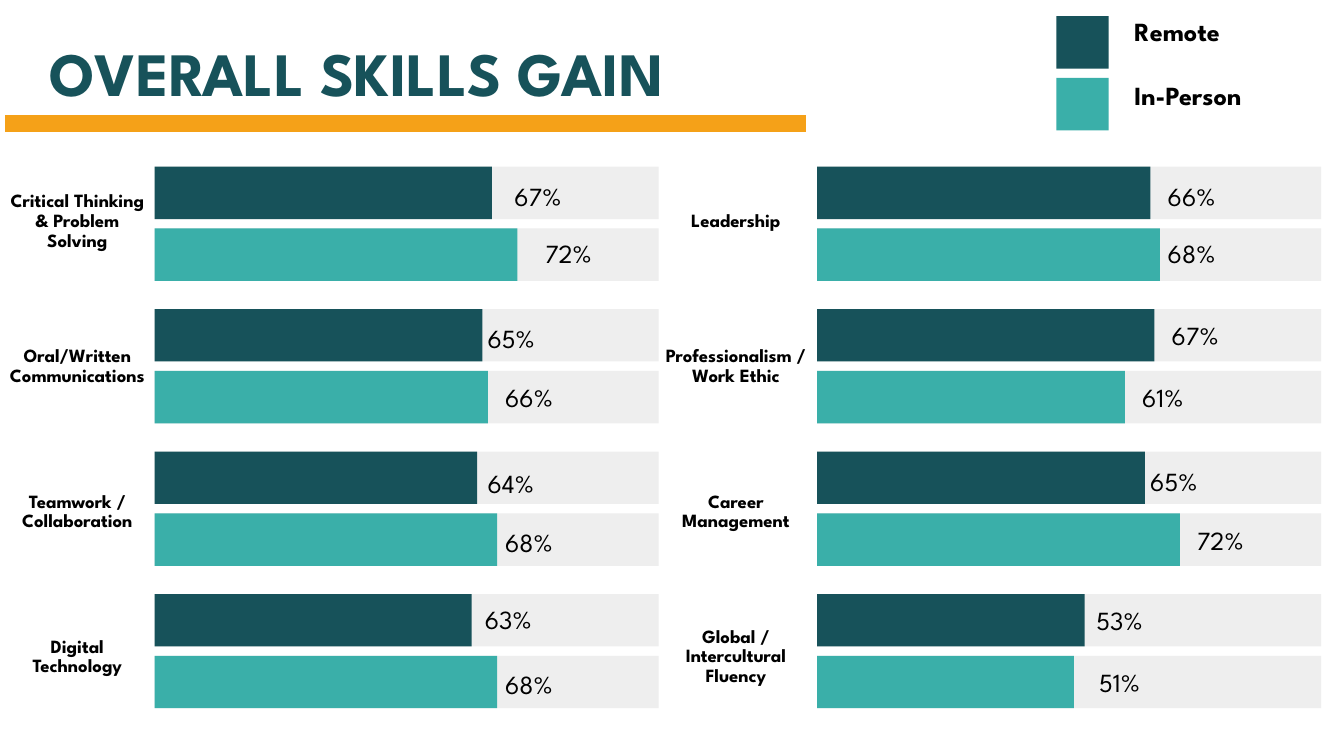
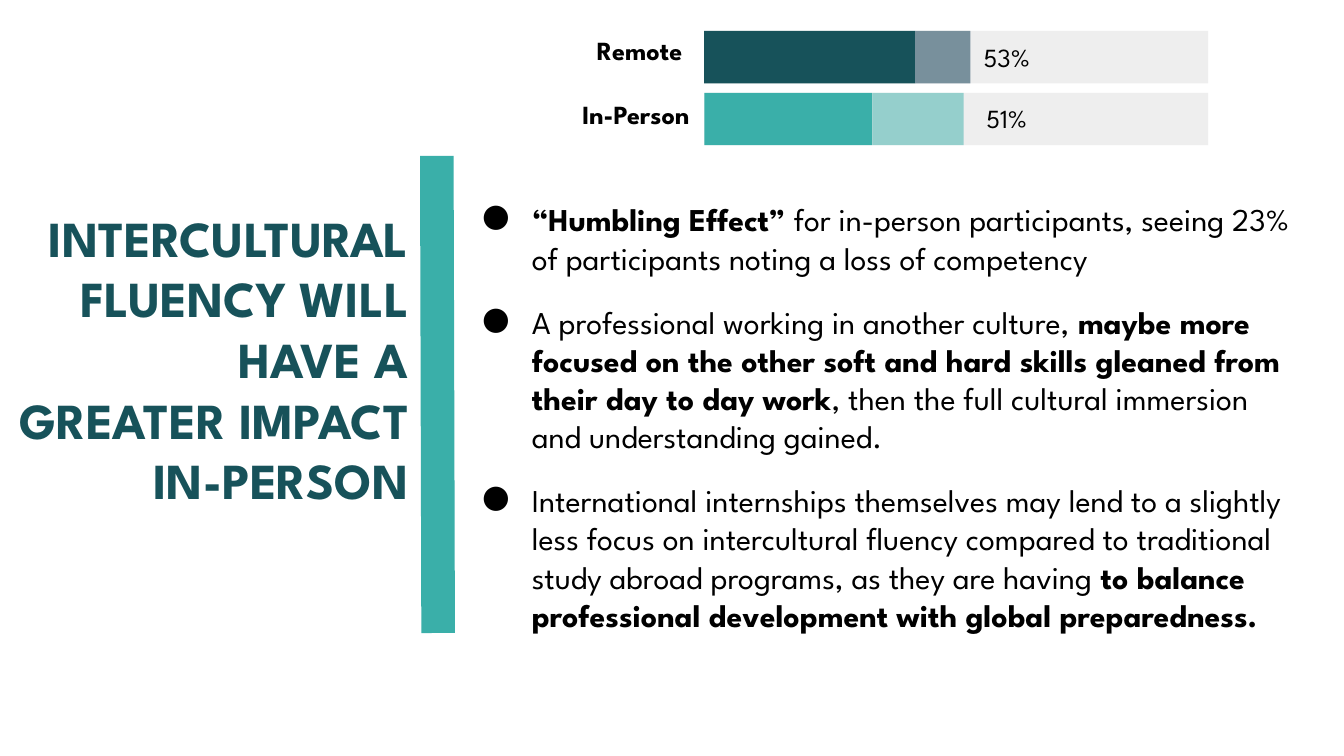
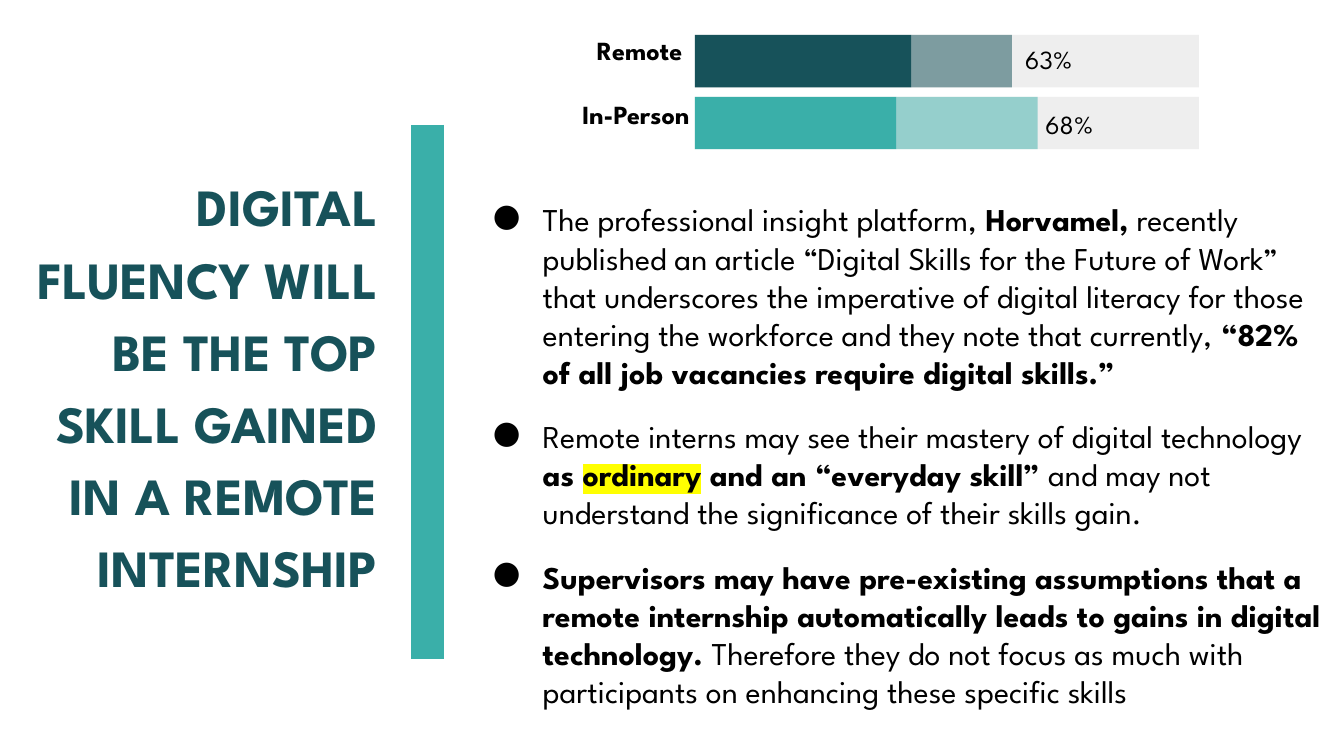
"""Build three slides comparing skills gained by remote and in-person interns."""
from dataclasses import dataclass

from lxml.etree import SubElement
from pptx import Presentation
from pptx.dml.color import RGBColor
from pptx.enum.shapes import MSO_CONNECTOR as Connector, MSO_SHAPE as Shape
from pptx.enum.text import MSO_ANCHOR as Anchor, MSO_AUTO_SIZE as AutoSize, PP_ALIGN as Align
from pptx.oxml.ns import qn
from pptx.slide import Slide
from pptx.text.text import TextFrame
from pptx.util import Emu, Pt

PX = 9144
FONT = "League Spartan"
NAVY, TEAL, ORANGE = "17525A", "3AAFA9", "F5A118"
SLATE, TRACK, BLACK, YELLOW = "78909C", "EEEEEE", "000000", "FFFF00"
TRACK_WIDTH, BAR_HEIGHT, BAR_STEP = 375, 39, 46
NO_TABLE_STYLE = "{2D5ABB26-0587-4C30-8999-92F81FD0307C}"
GROUPS = ["Remote", "In-Person"]


@dataclass(frozen=True)
class Box:
    left: int
    top: int
    width: int
    height: int

    def emu(self) -> list[Emu]:
        return [px(n) for n in (self.left, self.top, self.width, self.height)]


@dataclass(frozen=True)
class Segment:
    width: int
    color: str
    opacity: int = 100


@dataclass(frozen=True)
class Meter:
    percent: int
    label_left: int
    label_top: int
    segments: tuple[Segment, ...] = ()


@dataclass(frozen=True)
class Skill:
    name: str
    remote: Meter
    in_person: Meter


@dataclass(frozen=True)
class Span:
    text: str
    bold: bool = False
    highlight: str = ""


@dataclass(frozen=True)
class Insight:
    title: str
    title_box: Box
    title_size: int
    title_spacing: float
    rule: tuple[int, int, int, int]
    meter_left: int
    meter_top: int
    meters: tuple[Meter, Meter]
    body_box: Box
    bullets: tuple[tuple[Span, ...], ...]


SKILL_COLUMNS = {
    0: [
        Skill("Critical Thinking & Problem Solving", Meter(67, 373, 124), Meter(72, 396, 167)),
        Skill("Oral/Written Communications", Meter(65, 353, 230), Meter(66, 366, 274)),
        Skill("Teamwork / Collaboration", Meter(64, 353, 338), Meter(68, 366, 382)),
        Skill("Digital Technology", Meter(63, 351, 439), Meter(68, 366, 487)),
    ],
    490: [
        Skill("Leadership", Meter(66, 859, 124), Meter(68, 859, 167)),
        Skill("Professionalism / Work Ethic", Meter(67, 862, 228), Meter(61, 840, 274)),
        Skill("Career Management", Meter(65, 846, 336), Meter(72, 881, 380)),
        Skill("Global / Intercultural Fluency", Meter(53, 806, 440), Meter(51, 808, 486)),
    ],
}

INSIGHTS = [
    Insight(
        "INTERCULTURAL FLUENCY WILL HAVE A\nGREATER IMPACT IN-PERSON",
        Box(0, 144, 314, 293), 27, 1.0, (325, 116, 326, 471), 524, 23,
        (
            Meter(53, 722, 21, (Segment(157, NAVY), Segment(41, SLATE))),
            Meter(51, 724, 66, (Segment(125, TEAL), Segment(68, TEAL, 49))),
        ),
        Box(336, 139, 643, 374),
        (
            (
                Span("“Humbling Effect”", True),
                Span(" for in-person participants, seeing 23% of participants "
                     "noting a loss of competency"),
            ),
            (
                Span("A professional working in another culture, "),
                Span("maybe more focused on the other soft and hard skills gleaned "
                     "from their day to day work", True),
                Span(", then the full cultural immersion and understanding gained."),
            ),
            (
                Span("International internships themselves may lend to a slightly less "
                     "focus on intercultural fluency compared to traditional study abroad "
                     "programs, as they are having "),
                Span("to balance professional development with global preparedness.", True),
            ),
        ),
    ),
    Insight(
        "DIGITAL FLUENCY WILL BE THE TOP SKILL GAINED IN A REMOTE INTERNSHIP",
        Box(0, 113, 291, 338), 28, 1.15, (318, 93, 318, 490), 517, 26,
        (
            Meter(63, 753, 22, (Segment(161, NAVY), Segment(75, NAVY, 52))),
            Meter(68, 768, 71, (Segment(150, TEAL), Segment(105, TEAL, 49))),
        ),
        Box(344, 139, 656, 403),
        (
            (
                Span("The professional insight platform, "),
                Span("Horvamel,", True),
                Span(" recently published an article “Digital Skills for the Future of "
                     "Work” that underscores the imperative of digital literacy for those "
                     "entering the workforce and they note that currently, "),
                Span("“82% of all job vacancies require digital skills.”", True),
            ),
            (
                Span("Remote interns may see their mastery of digital technology "),
                Span("as ", True),
                Span("ordinary", True, YELLOW),
                Span(" and an “everyday skill”", True),
                Span(" and may not understand the significance of their skills gain."),
            ),
            (
                Span("Supervisors may have pre-existing assumptions that a remote "
                     "internship automatically leads to gains in digital technology. ", True),
                Span("Therefore they do not focus as much with participants on enhancing "
                     "these specific skills"),
            ),
        ),
    ),
]


def px(count: int) -> Emu:
    return Emu(count * PX)


def rgb(color: str) -> RGBColor:
    return RGBColor.from_string(color)


def style_font(font, size: int, color: str = BLACK, bold: bool = False) -> None:
    font.name, font.size, font.bold = FONT, Pt(size), bold
    font.color.rgb = rgb(color)


def prepare_frame(frame: TextFrame) -> None:
    frame.word_wrap = True
    frame.auto_size = AutoSize.NONE
    frame.vertical_anchor = Anchor.TOP
    frame.margin_left = frame.margin_right = px(10)
    frame.margin_top = frame.margin_bottom = px(10)


def set_title(page: Slide, text: str, box: Box, size: int, align: Align, spacing: float) -> None:
    title = page.shapes.title
    title.left, title.top, title.width, title.height = box.emu()
    prepare_frame(title.text_frame)
    title.text_frame.text = text
    for para in title.text_frame.paragraphs:
        para.alignment, para.line_spacing = align, spacing
        style_font(para.font, size, NAVY, True)


def add_rule(page: Slide, ends: tuple[int, int, int, int], color: str, weight: int) -> None:
    rule = page.shapes.add_connector(Connector.STRAIGHT, *(px(n) for n in ends))
    rule.line.color.rgb = rgb(color)
    rule.line.width = Pt(weight)
    SubElement(rule._element.spPr, qn("a:effectLst"))


def add_bar(page: Slide, box: Box, color: str, opacity: int = 100) -> None:
    bar = page.shapes.add_shape(Shape.RECTANGLE, *box.emu())
    bar.shadow.inherit = False
    bar.line.fill.background()
    bar.fill.solid()
    bar.fill.fore_color.rgb = rgb(color)
    if opacity < 100:
        tint = bar._element.spPr.find(f"{qn('a:solidFill')}/{qn('a:srgbClr')}")
        SubElement(tint, qn("a:alpha"), val=str(opacity * 1000))


def add_meter(page: Slide, left: int, top: int, meter: Meter, color: str) -> None:
    add_bar(page, Box(left, top, TRACK_WIDTH, BAR_HEIGHT), TRACK)
    whole = Segment(round(TRACK_WIDTH * meter.percent / 100), color)
    for segment in meter.segments or (whole,):
        add_bar(page, Box(left, top, segment.width, BAR_HEIGHT), segment.color, segment.opacity)
        left += segment.width
    label = page.shapes.add_textbox(*Box(meter.label_left, meter.label_top, 66, 44).emu())
    prepare_frame(label.text_frame)
    para = label.text_frame.paragraphs[0]
    para.text = f"{meter.percent}%"
    style_font(para.font, 14)


def add_meter_pair(page: Slide, left: int, top: int, meters: tuple[Meter, Meter]) -> None:
    for index, (meter, color) in enumerate(zip(meters, (NAVY, TEAL))):
        add_meter(page, left, top + index * BAR_STEP, meter, color)


def add_label_table(page: Slide, box: Box, labels: list[str], size: int, align: Align,
                    anchor: Anchor, margins: tuple[int, int], spacing: float = 1.0) -> None:
    table = page.shapes.add_table(len(labels), 1, *box.emu()).table
    table.first_row = table.horz_banding = False
    table._tbl.tblPr.find(qn("a:tableStyleId")).text = NO_TABLE_STYLE
    for index, text in enumerate(labels):
        cell = table.cell(index, 0)
        cell.fill.background()
        cell.vertical_anchor = anchor
        cell.margin_left = cell.margin_right = px(margins[0])
        cell.margin_top = cell.margin_bottom = px(margins[1])
        para = cell.text_frame.paragraphs[0]
        para.text, para.alignment, para.line_spacing = text, align, spacing
        style_font(para.font, size, BLACK, True)


def add_group_names(page: Slide, left: int, top: int, align: Align, names: list[str]) -> None:
    add_label_table(page, Box(left, top, 148, 96), names, 14, align, Anchor.TOP, (10, 10))


def add_bullets(page: Slide, box: Box, bullets: tuple[tuple[Span, ...], ...]) -> None:
    frame = page.shapes.add_textbox(*box.emu()).text_frame
    prepare_frame(frame)
    for index, spans in enumerate(bullets):
        para = frame.add_paragraph() if index else frame.paragraphs[0]
        props = para._p.get_or_add_pPr()
        props.set("marL", str(px(50)))
        props.set("indent", str(px(-37)))
        SubElement(SubElement(props, qn("a:buClr")), qn("a:srgbClr"), val=BLACK)
        SubElement(props, qn("a:buFont"), typeface=FONT)
        SubElement(props, qn("a:buChar"), char="●")
        para.space_before = Pt(14 if index else 0)
        style_font(para.font, 17)
        for span in spans:
            run = para.add_run()
            run.text, run.font.bold = span.text, span.bold
            if span.highlight:
                mark = SubElement(run.font._element, qn("a:highlight"))
                SubElement(mark, qn("a:srgbClr"), val=span.highlight)


def build_overview(page: Slide) -> None:
    set_title(page, "OVERALL SKILLS GAIN", Box(27, 16, 964, 76), 33, Align.LEFT, 1.0)
    add_rule(page, (4, 92, 600, 92), ORANGE, 9)
    for index, color in enumerate((NAVY, TEAL)):
        add_bar(page, Box(786, 12 + index * BAR_STEP, 39, BAR_HEIGHT), color)
    add_group_names(page, 834, 7, Align.LEFT, GROUPS)
    for left, skills in SKILL_COLUMNS.items():
        add_label_table(page, Box(left, 111, 115, 432), [skill.name for skill in skills],
                        10, Align.CENTER, Anchor.MIDDLE, (3, 2), 1.15)
        for row, skill in enumerate(skills):
            meters = (skill.remote, skill.in_person)
            add_meter_pair(page, left + (118 if left else 115), 124 + row * 106, meters)


def build_insight(page: Slide, insight: Insight) -> None:
    set_title(page, insight.title, insight.title_box, insight.title_size,
              Align.RIGHT, insight.title_spacing)
    add_rule(page, insight.rule, TEAL, 18)
    add_meter_pair(page, insight.meter_left, insight.meter_top, insight.meters)
    add_group_names(page, 375, 21, Align.RIGHT, ["Remote ", "In-Person"])
    add_bullets(page, insight.body_box, insight.bullets)


def main() -> None:
    deck = Presentation()
    deck.slide_width = px(1000)
    deck.slide_height = Emu(deck.slide_width * 9 // 16)
    title_only = deck.slide_layouts[5]
    build_overview(deck.slides.add_slide(title_only))
    for insight in INSIGHTS:
        build_insight(deck.slides.add_slide(title_only), insight)
    deck.save("out.pptx")


if __name__ == "__main__":
    main()
